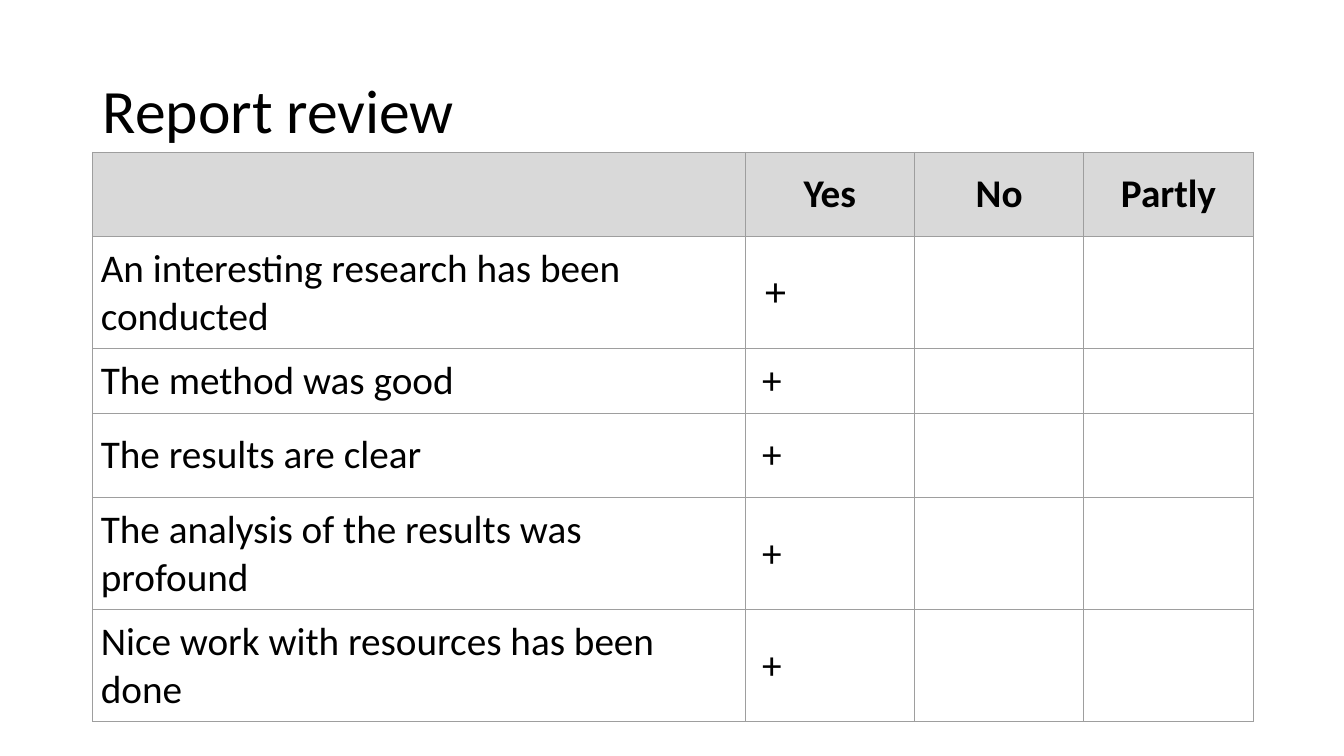
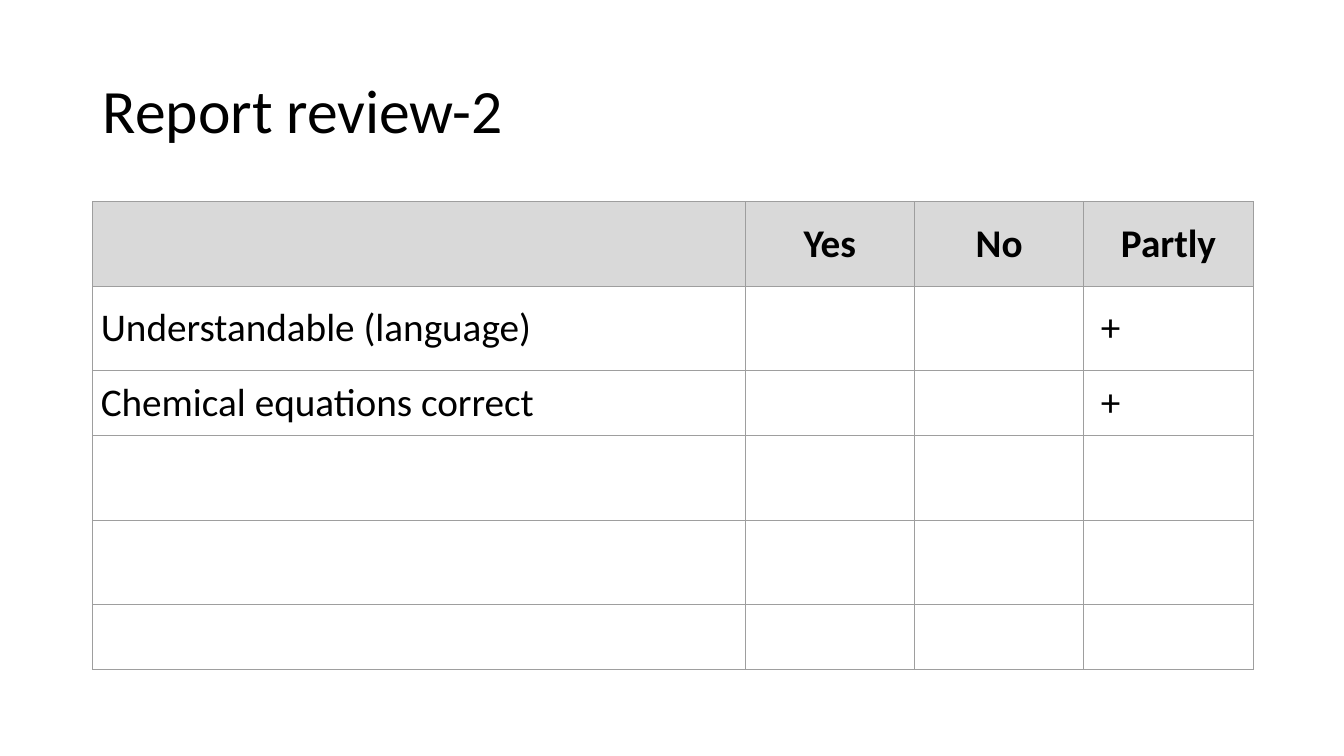
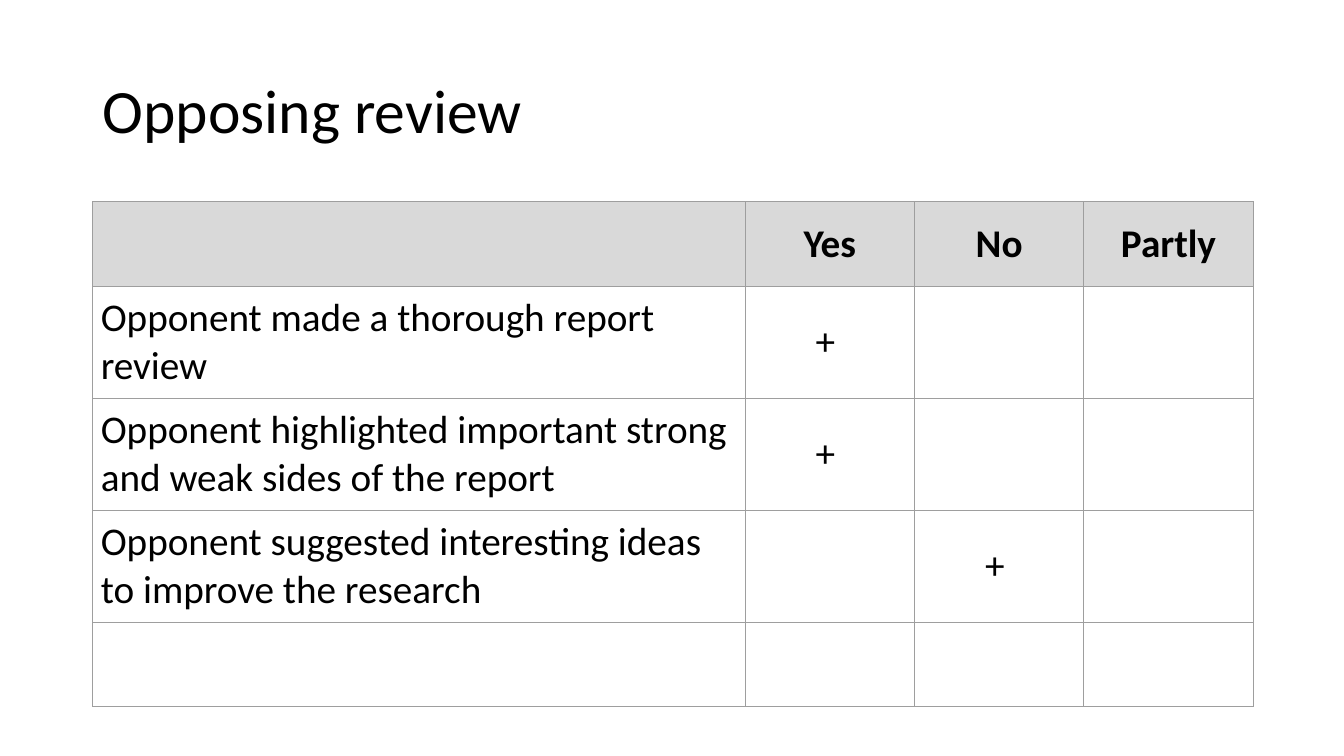
from dataclasses import dataclass

from lxml import etree
from pptx import Presentation
from pptx.dml.color import RGBColor
from pptx.enum import text
from pptx.oxml.ns import qn
from pptx.util import Inches, Pt


@dataclass(frozen=True)
class Theme:
    """Colours, fonts, type sizes and lengths shared by the slides."""
    ink: str = "000000"
    paper: str = "FFFFFF"
    header: str = "D9D9D9"
    grid: str = "9E9E9E"
    font: str = "Calibri"
    mark_font: str = "Arial"
    title_size: int = 44
    cell_size: int = 28
    grid_width: float = 0.75
    left: float = 0.92
    padding: float = 0.08
    short_row: float = 0.64
    row: float = 0.84
    tall_row: float = 1.11
    columns: tuple = (6.47, 1.68, 1.68, 1.68)


T = Theme()
ANSWERS = ("Yes", "No", "Partly")
BLANK = ("", None)

REVIEWS = [
    dict(title="Report review", top=1.51, indents=(0.11, 0.09, 0.09, 0.09, 0.09),
         first_mark_font=T.mark_font,
         heights=(T.tall_row, T.short_row, T.row, T.tall_row, T.tall_row),
         criteria=[("An interesting research has been conducted", "Yes"),
                   ("The method was good", "Yes"),
                   ("The results are clear", "Yes"),
                   ("The analysis of the results was profound", "Yes"),
                   ("Nice work with resources has been done", "Yes")]),
    dict(title="Report review-2", top=2, indents=(0.09,) * 5,
         heights=(T.row, T.short_row, T.row, T.row, T.short_row),
         criteria=[("Understandable (language)", "Partly"),
                   ("Chemical equations correct", "Partly"),
                   BLANK, BLANK, BLANK]),
    dict(title="Opposing review", top=2, indents=(0.62,) * 4,
         heights=(T.tall_row,) * 3 + (T.row,),
         criteria=[("Opponent made a thorough report review", "Yes"),
                   ("Opponent highlighted important strong and weak sides of the report", "Yes"),
                   ("Opponent suggested interesting ideas to improve the research", "No"),
                   BLANK]),
]


def style_font(font, size, name=T.font, bold=False):
    """Apply the shared text colour with a size, face and weight."""
    font.size, font.name, font.bold = Pt(size), name, bold
    font.color.rgb = RGBColor.from_string(T.ink)


def add_title(s, wording):
    """Fill and place the title placeholder."""
    sp = s.shapes.title
    sp.left, sp.top, sp.width, sp.height = map(Inches, (T.left, 0.4, 11.5, 1.45))
    tf = sp.text_frame
    tf.text = wording
    tf.auto_size = text.MSO_AUTO_SIZE.NONE
    tf.vertical_anchor = text.MSO_ANCHOR.MIDDLE
    p = tf.paragraphs[0]
    p.alignment, p.line_spacing = text.PP_ALIGN.LEFT, 0.9
    style_font(p.font, T.title_size)


def add_borders(cell):
    """Draw the grid line on all four sides of a cell."""
    tc_pr = cell._tc.get_or_add_tcPr()
    for side in ("lnL", "lnR", "lnT", "lnB"):
        ln = etree.SubElement(tc_pr, qn(f"a:{side}"), w=str(Pt(T.grid_width)))
        fill = etree.SubElement(ln, qn("a:solidFill"))
        etree.SubElement(fill, qn("a:srgbClr"), val=T.grid)


def fill_cell(cell, wording="", fill=T.paper, font=T.font, header=False, indent=0):
    """Set the fill, borders and text of one cell."""
    add_borders(cell)
    cell.fill.solid()
    cell.fill.fore_color.rgb = RGBColor.from_string(fill)
    cell.margin_right = cell.margin_top = cell.margin_bottom = Inches(T.padding)
    cell.margin_left = Inches(T.padding + indent)
    cell.vertical_anchor = text.MSO_ANCHOR.MIDDLE
    cell.text = wording
    p = cell.text_frame.paragraphs[0]
    p.alignment = text.PP_ALIGN.CENTER if header else text.PP_ALIGN.LEFT
    style_font(p.font, T.cell_size, font, header)


def add_review_table(s, top, heights, criteria, indents, first_mark_font=T.font):
    """Add a table of criteria with a plus under each answer."""
    heights = (T.row, *heights)
    table = s.shapes.add_table(
        len(heights), len(T.columns), Inches(T.left), Inches(top),
        Inches(sum(T.columns)), Inches(sum(heights))).table
    table.first_row = table.horz_banding = False
    for column, width in zip(table.columns, T.columns):
        column.width = Inches(width)
    for row, height in zip(table.rows, heights):
        row.height = Inches(height)
    for c, label in enumerate(("", *ANSWERS)):
        fill_cell(table.cell(0, c), label, T.header, header=True)
    for r, ((criterion, answer), indent) in enumerate(zip(criteria, indents), 1):
        fill_cell(table.cell(r, 0), criterion)
        font = first_mark_font if r == 1 else T.font
        for c, label in enumerate(ANSWERS, 1):
            mark = "+" if label == answer else ""
            fill_cell(table.cell(r, c), mark, font=font, indent=indent)


def main():
    """Build the review slides and save them."""
    prs = Presentation()
    prs.slide_width, prs.slide_height = Inches(13.33), Inches(7.5)
    for review in REVIEWS:
        s = prs.slides.add_slide(prs.slide_layouts[5])
        add_title(s, review["title"])
        add_review_table(s, **{k: v for k, v in review.items() if k != "title"})
    prs.save("out.pptx")


if __name__ == "__main__":
    main()
